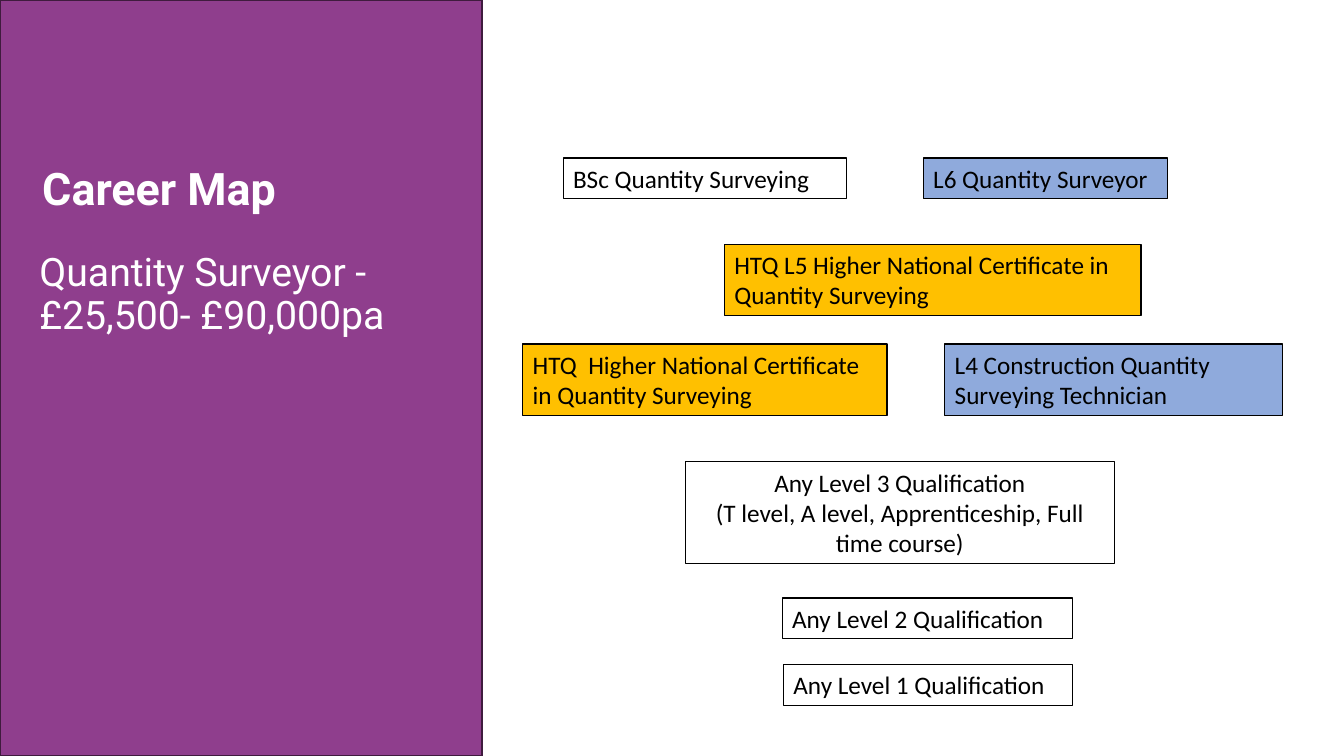
"""Build the Career Map slide for the quantity surveyor route."""
from pptx import Presentation
from pptx import util as u
from pptx.dml.color import RGBColor
from pptx.enum import shapes, text

PURPLE = RGBColor(0x8F, 0x3E, 0x8D)
DARK_PURPLE = RGBColor(0x3F, 0x1B, 0x3E)
AMBER = RGBColor(0xFF, 0xC0, 0x00)
BLUE = RGBColor(0x8F, 0xAA, 0xDC)
WHITE = RGBColor(0xFF, 0xFF, 0xFF)
BLACK = RGBColor(0x00, 0x00, 0x00)

deck = Presentation()
deck.slide_width, deck.slide_height = u.Inches(13.33), u.Inches(7.5)
page = deck.slides.add_slide(deck.slide_layouts[6])


def area(left, top, width, height):
    """Turn percentages of the slide's size into lengths."""
    across, down = deck.slide_width / 100, deck.slide_height / 100
    return int(left * across), int(top * down), int(width * across), int(height * down)


def add_box(place, fill, line, weight):
    """Add a rectangle with a thin outline and an optional fill."""
    box = page.shapes.add_shape(shapes.MSO_SHAPE.RECTANGLE, *place)
    box.shadow.inherit = False
    if fill is None:
        box.fill.background()
    else:
        box.fill.solid()
        box.fill.fore_color.rgb = fill
    box.line.color.rgb = line
    box.line.width = u.Pt(weight)
    return box


add_box(area(0, 0, 35.85, 100), PURPLE, DARK_PURPLE, 1.5)

headings = [
    ("Career Map", area(2.4, 20.4, 30.8, 9.6), 32, True, text.MSO_ANCHOR.MIDDLE),
    ("Quantity Surveyor - £25,500- £90,000pa", area(2.2, 32.8, 30.8, 26), 28, False,
     text.MSO_ANCHOR.TOP),
]
for wording, place, size, bold, anchor in headings:
    frame = page.shapes.add_textbox(*place).text_frame
    frame.word_wrap = True
    frame.vertical_anchor = anchor
    frame.text = wording
    para = frame.paragraphs[0]
    para.line_spacing = 0.9
    span = para.runs[0]
    span.font.name = "Roboto"
    span.font.size = u.Pt(size)
    span.font.bold = bold
    span.font.color.rgb = WHITE

LEFT, CENTER = text.PP_ALIGN.LEFT, text.PP_ALIGN.CENTER
steps = [
    ("Any Level 1 Qualification", 58.3, 87.9, 21.5, 1, None, LEFT),
    ("Any Level 2 Qualification", 58.2, 79.1, 21.6, 1, None, LEFT),
    ("Any Level 3 Qualification\n(T level, A level, Apprenticeship, Full time course)",
     51, 61.1, 31.9, 3, None, CENTER),
    ("HTQ  Higher National Certificate in Quantity Surveying",
     38.9, 45.5, 27.1, 2, AMBER, LEFT),
    ("L4 Construction Quantity Surveying Technician", 70.3, 45.5, 25.1, 2, BLUE, LEFT),
    ("HTQ L5 Higher National Certificate in Quantity Surveying",
     53.9, 32.3, 31, 2, AMBER, LEFT),
    ("BSc Quantity Surveying", 41.9, 20.9, 21.1, 1, None, LEFT),
    ("L6 Quantity Surveyor", 68.7, 20.9, 18.2, 1, BLUE, LEFT),
]
for wording, left, top, width, lines, fill, align in steps:
    box = add_box(area(left, top, width, 1.4 + 4 * lines), fill, BLACK, 0.75)
    frame = box.text_frame
    frame.word_wrap = True
    frame.auto_size = text.MSO_AUTO_SIZE.SHAPE_TO_FIT_TEXT
    frame.vertical_anchor = text.MSO_ANCHOR.TOP
    frame.text = wording
    for para in frame.paragraphs:
        para.alignment = align
        span = para.runs[0]
        span.font.name = "Calibri"
        span.font.size = u.Pt(18)
        span.font.color.rgb = BLACK

deck.save("out.pptx")
